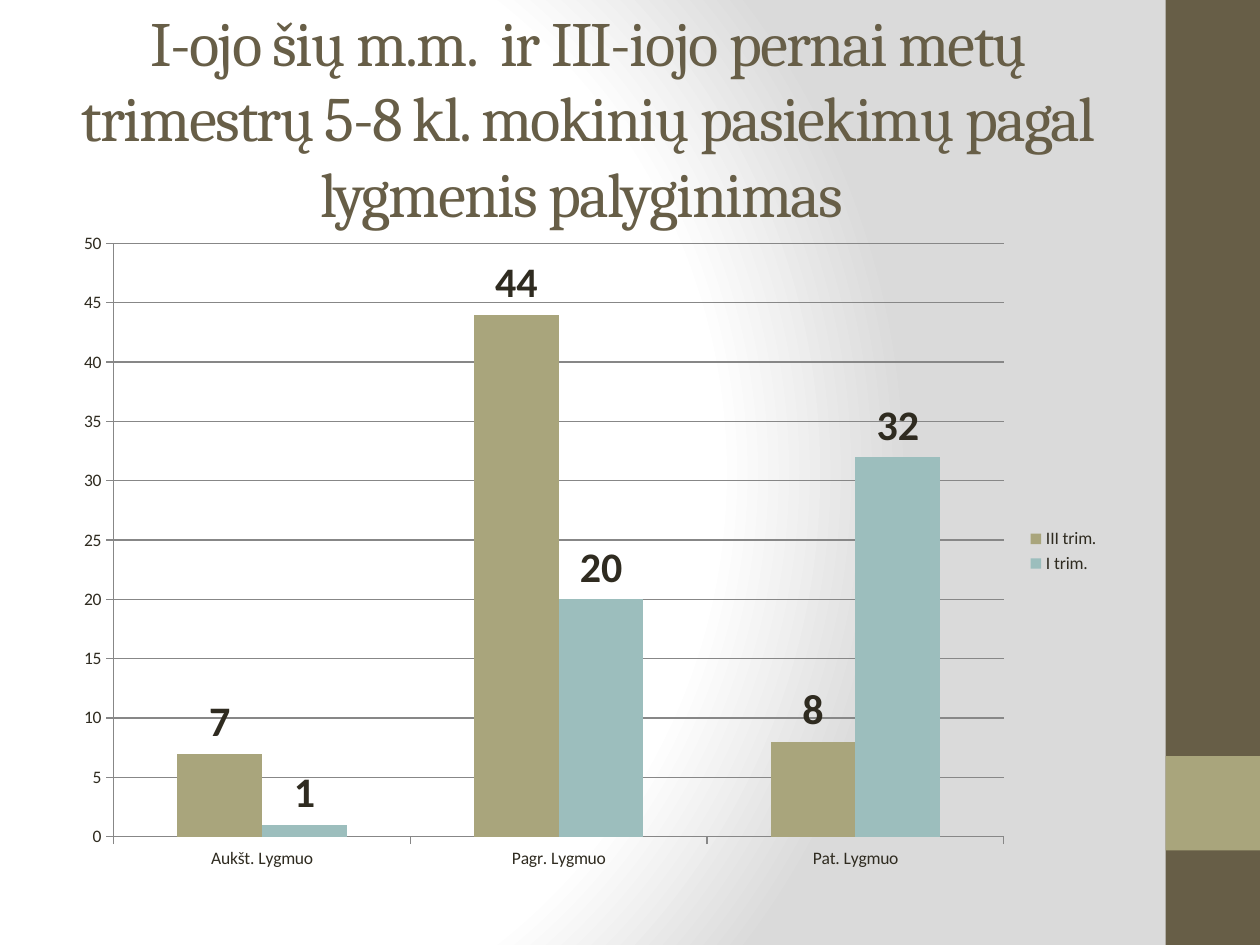
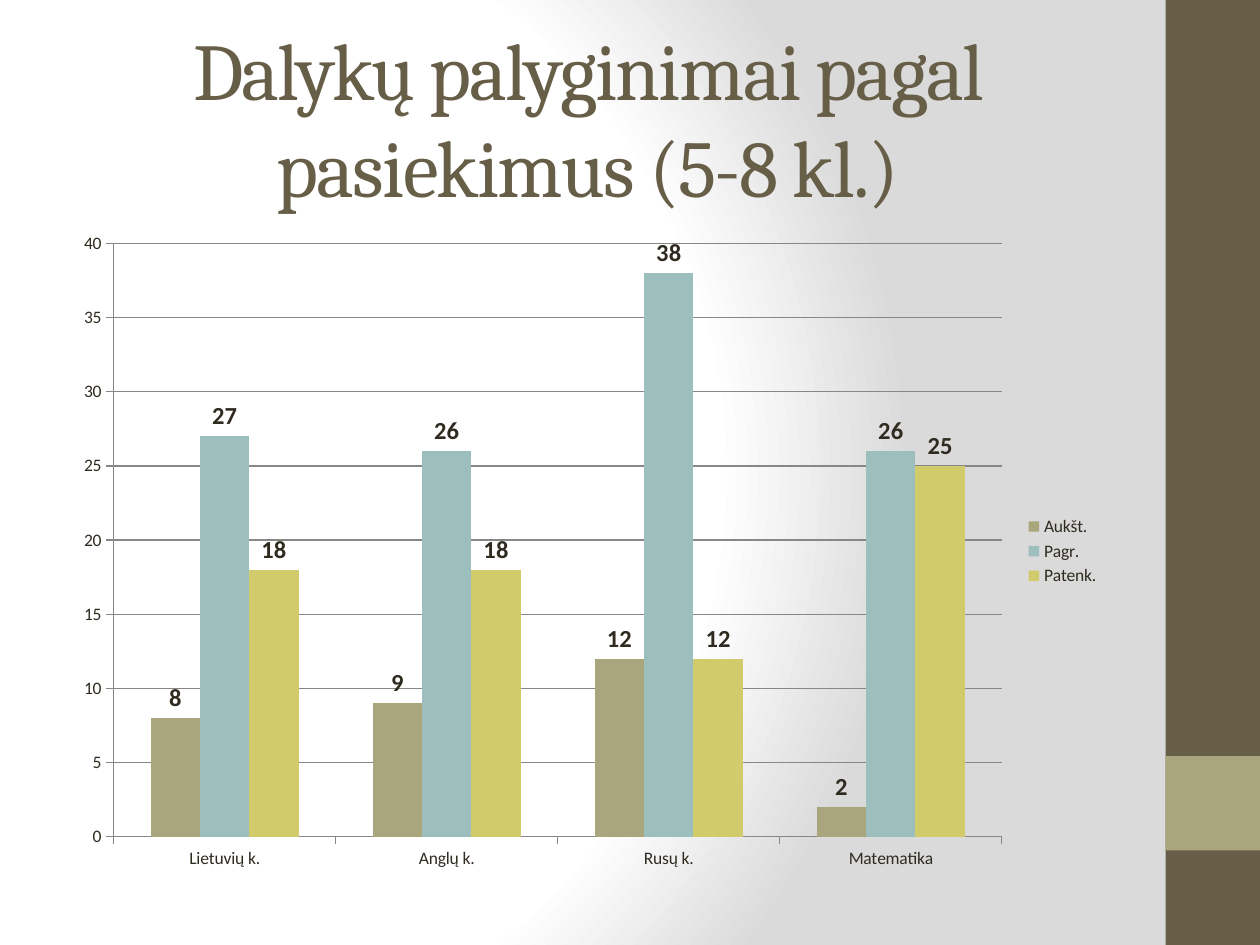
from pptx import Presentation
from pptx.chart.data import CategoryChartData
from pptx.dml.color import RGBColor
from pptx.enum.chart import (XL_CHART_TYPE, XL_LABEL_POSITION,
                             XL_LEGEND_POSITION, XL_TICK_MARK)
from pptx.enum.shapes import MSO_SHAPE
from pptx.enum.text import MSO_ANCHOR, PP_ALIGN
from pptx.oxml import parse_xml
from pptx.oxml.ns import nsdecls
from pptx.util import Inches, Pt

BROWN = RGBColor(0x67, 0x5E, 0x47)
OLIVE = RGBColor(0xA9, 0xA5, 0x7C)
TEAL = RGBColor(0x9C, 0xBE, 0xBD)
YELLOW = RGBColor(0xD2, 0xCB, 0x6C)
INK = RGBColor(0x2F, 0x2B, 0x20)
GRID = RGBColor(0x87, 0x87, 0x87)
WHITE = RGBColor(0xFF, 0xFF, 0xFF)
GREY = RGBColor(0xDA, 0xDA, 0xDA)

SERIES_COLORS = (OLIVE, TEAL, YELLOW)
BACKGROUND_STOPS = ((0, WHITE), (75, WHITE), (100, GREY))
TITLE_BOX = (0.5, 0.3, 8.33, 1.25)
CHART_BOX = (0.5, 1.75, 8.33, 5.25)
BANDS = (((9.25, 0, 0.75, 7.5), BROWN), ((9.25, 6, 0.75, 0.75), OLIVE))


def inches(box):
    """Convert a left, top, width, height box to lengths."""
    return [Inches(v) for v in box]


def set_background(slide):
    """Fill the background with a radial white to grey gradient."""
    slide.background.fill.gradient()
    stops = "".join(
        f'<a:gs pos="{pos * 1000}"><a:srgbClr val="{color}"/></a:gs>'
        for pos, color in BACKGROUND_STOPS)
    grad = parse_xml(
        f'<a:gradFill {nsdecls("a")} rotWithShape="1"><a:gsLst>{stops}</a:gsLst>'
        '<a:path path="circle"><a:fillToRect l="20000" t="50000" '
        'r="100000" b="50000"/></a:path></a:gradFill>')
    old = slide.element.xpath(".//p:bgPr/a:gradFill")[0]
    old.getparent().replace(old, grad)


def add_bands(slide):
    """Draw the side band and its accent square."""
    for box, color in BANDS:
        sp = slide.shapes.add_shape(MSO_SHAPE.RECTANGLE, *inches(box))
        sp.shadow.inherit = False
        sp.fill.solid()
        sp.fill.fore_color.rgb = color
        sp.line.fill.background()


def add_title(slide, box, text, size):
    """Write the centred title in the given box."""
    tf = slide.shapes.add_textbox(*inches(box)).text_frame
    tf.word_wrap = True
    tf.vertical_anchor = MSO_ANCHOR.MIDDLE
    p = tf.paragraphs[0]
    p.alignment = PP_ALIGN.CENTER
    r = p.add_run()
    r.text = text
    r.font.name = "Cambria"
    r.font.size = Pt(size)
    r.font.color.rgb = BROWN
    r._r.get_or_add_rPr().set("spc", "-100")


def style_line(line):
    """Give an axis or gridline its thin grey stroke."""
    line.color.rgb = GRID
    line.width = Pt(0.75)


def style_font(font, size, bold=False):
    """Set the chart typeface, size and colour."""
    font.name = "Calibri"
    font.size = Pt(size)
    font.bold = bold
    font.color.rgb = INK


def add_column_chart(slide, box, categories, series, top, label_size):
    """Place a clustered column chart with value labels in the given box."""
    data = CategoryChartData()
    data.categories = categories
    for name, values in series.items():
        data.add_series(name, values)
    chart = slide.shapes.add_chart(
        XL_CHART_TYPE.COLUMN_CLUSTERED, *inches(box), data).chart
    style_font(chart.font, 10)
    chart.has_title = False
    chart.has_legend = True
    chart.legend.position = XL_LEGEND_POSITION.RIGHT
    chart.legend.include_in_layout = False

    for axis in (chart.category_axis, chart.value_axis):
        axis.major_tick_mark = XL_TICK_MARK.OUTSIDE
        style_line(axis.format.line)
    axis = chart.value_axis
    axis.minimum_scale, axis.maximum_scale, axis.major_unit = 0, top, 5
    axis.has_major_gridlines = True
    style_line(axis.major_gridlines.format.line)

    plot = chart.plots[0]
    plot.gap_width = 150
    plot.overlap = 0
    plot.vary_by_categories = False
    for column, color in zip(plot.series, SERIES_COLORS):
        column.format.fill.solid()
        column.format.fill.fore_color.rgb = color
        labels = column.data_labels
        labels.show_value = True
        labels.position = XL_LABEL_POSITION.OUTSIDE_END
        style_font(labels.font, label_size, True)


def add_chart_slide(prs, title, title_size, *chart_args):
    """Add one slide with a title above a column chart."""
    slide = prs.slides.add_slide(prs.slide_layouts[6])
    set_background(slide)
    add_bands(slide)
    add_title(slide, TITLE_BOX, title, title_size)
    add_column_chart(slide, CHART_BOX, *chart_args)


def main():
    """Build and save the presentation."""
    prs = Presentation()
    prs.slide_width, prs.slide_height = Inches(10), Inches(7.5)
    add_chart_slide(
        prs,
        "I-ojo šių m.m.  ir III-iojo pernai metų trimestrų 5-8 kl. "
        "mokinių pasiekimų pagal lygmenis palyginimas ", 36,
        ("Aukšt. Lygmuo", "Pagr. Lygmuo", "Pat. Lygmuo"),
        {"III trim.": (7, 44, 8), "I trim.": (1, 20, 32)}, 50, 24)
    add_chart_slide(
        prs, "Dalykų palyginimai pagal pasiekimus (5-8 kl.)", 46,
        ("Lietuvių k.", "Anglų k.", "Rusų k.", "Matematika"),
        {"Aukšt.": (8, 9, 12, 2), "Pagr.": (27, 26, 38, 26),
         "Patenk.": (18, 18, 12, 25)}, 40, 14)
    prs.save("out.pptx")


if __name__ == "__main__":
    main()
